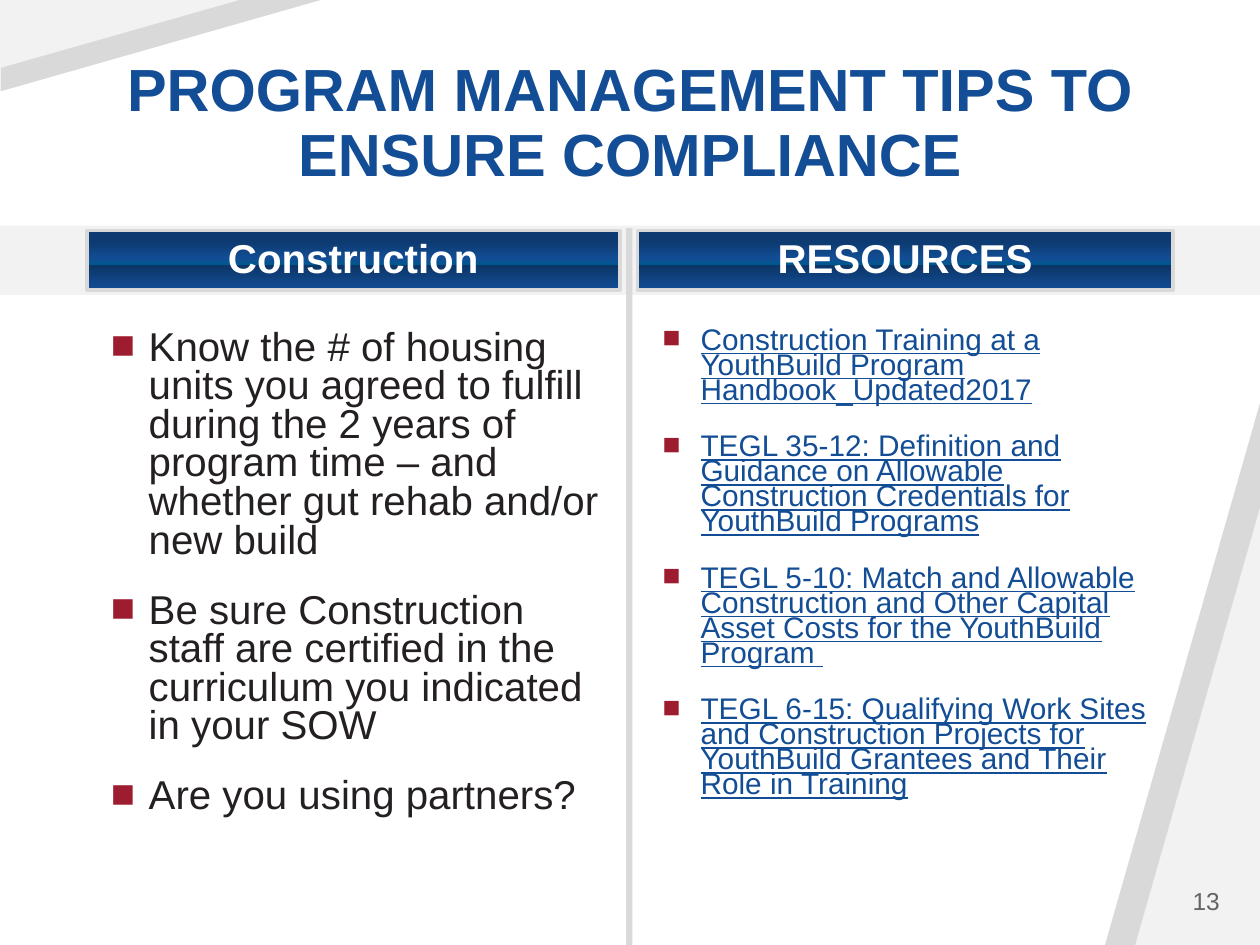
from lxml import etree
from pptx import Presentation
from pptx.dml.color import RGBColor
from pptx.enum import shapes, text
from pptx.oxml import ns
from pptx.util import Inches, Pt

BLUE = RGBColor(0x12, 0x4D, 0x95)
RED = RGBColor(0x9E, 0x1C, 0x30)
INK = RGBColor(0x24, 0x20, 0x21)
GRAY = RGBColor(0x64, 0x64, 0x64)
MID = RGBColor(0xD9, 0xD9, 0xD9)
PALE = RGBColor(0xF2, 0xF2, 0xF2)
WHITE = RGBColor(0xFF, 0xFF, 0xFF)
STOPS = [
    (19, RGBColor(0x0D, 0x3A, 0x70)),
    (47, BLUE),
    (58, RGBColor(0x00, 0x58, 0x8F)),
    (59, RGBColor(0x0D, 0x36, 0x68)),
    (100, BLUE),
]


def shade(fill, root):
    """Give fill, which lies inside the element root, the blue gradient."""
    fill.gradient()
    fill.gradient_angle = 270
    stops = root.find(".//" + ns.qn("a:gsLst"))
    for old in list(stops):
        stops.remove(old)
    for spot, color in STOPS:
        stop = etree.SubElement(stops, ns.qn("a:gs"), pos=str(spot * 1000))
        etree.SubElement(stop, ns.qn("a:srgbClr"), val=str(color))


def write(shape, box, lines, size, color=None, bold=False, underline=False,
          align=text.PP_ALIGN.LEFT, anchor=text.MSO_ANCHOR.TOP,
          spacing=1, gap=0, bullet=None):
    """Place the shape and fill it with lines; no color means the gradient."""
    shape.left, shape.top, shape.width, shape.height = map(Inches, box)
    frame = shape.text_frame
    frame.word_wrap = True
    frame.auto_size = text.MSO_AUTO_SIZE.NONE
    frame.vertical_anchor = anchor
    frame.text = "\n".join(lines)
    for i, para in enumerate(frame.paragraphs):
        para.alignment = align
        para.line_spacing = spacing
        para.space_before = Pt(gap if i else 0)
        if bullet:
            props = para._p.get_or_add_pPr()
            props.set("marL", str(Inches(0.3)))
            props.set("indent", str(Inches(-0.3)))
            tint = etree.SubElement(props, ns.qn("a:buClr"))
            etree.SubElement(tint, ns.qn("a:srgbClr"), val=str(RED))
            etree.SubElement(props, ns.qn("a:buFont"), typeface="Arial")
            etree.SubElement(props, ns.qn("a:buChar"), char=bullet)
        for run in para.runs:
            font = run.font
            font.name = "Arial"
            font.size = Pt(size)
            font.bold = bold
            font.underline = underline
            if color is None:
                shade(font.fill, run._r)
            else:
                font.color.rgb = color


deck = Presentation()
deck.slide_width, deck.slide_height = Inches(10), Inches(7.5)
slide = deck.slides.add_slide(deck.slide_layouts[4])
title, head1, list1, head2, list2 = slide.placeholders

# Background: corner wedges, header band and column divider
WEDGE = shapes.MSO_SHAPE.ISOSCELES_TRIANGLE
RECT = shapes.MSO_SHAPE.RECTANGLE
for kind, box, color, turn, peak in [
    (WEDGE, (8.77, 3.2, 1.23, 4.3), MID, 0, 1),
    (WEDGE, (9.01, 4.03, 0.99, 3.47), PALE, 0, 1),
    (WEDGE, (0.92, -0.92, 0.73, 2.56), MID, 90, 0),
    (WEDGE, (0.68, -0.68, 0.54, 1.9), PALE, 90, 0),
    (RECT, (0, 1.79, 10, 0.55), PALE, 0, None),
    (RECT, (4.97, 1.81, 0.05, 5.69), MID, 0, None),
]:
    part = slide.shapes.add_shape(kind, *map(Inches, box))
    part.shadow.inherit = False
    part.fill.solid()
    part.fill.fore_color.rgb = color
    part.line.fill.background()
    part.rotation = turn
    if peak is not None:
        part.adjustments[0] = peak
    title._element.addprevious(part._element)

write(title, (0.69, 0.4, 8.62, 1.15),
      ["PROGRAM MANAGEMENT TIPS TO ENSURE COMPLIANCE"], 34, bold=True,
      align=text.PP_ALIGN.CENTER, anchor=text.MSO_ANCHOR.BOTTOM, spacing=0.9)

for head, label, left, width in [
    (head1, "Construction", 0.69, 4.23),
    (head2, "RESOURCES", 5.06, 4.25),
]:
    write(head, (left, 1.83, width, 0.47), [label], 23, WHITE, bold=True,
          align=text.PP_ALIGN.CENTER, anchor=text.MSO_ANCHOR.MIDDLE,
          spacing=0.9)
    frame = head.text_frame
    frame.margin_left = frame.margin_right = Inches(0.05)
    frame.margin_top = frame.margin_bottom = Inches(0.06)
    shade(head.fill, head._element)
    head.line.color.rgb = MID
    head.line.width = Pt(2)

write(list1, (0.78, 2.57, 4.1, 4.2), [
    "Know the # of housing units you agreed to fulfill during the 2 years "
    "of program time – and whether gut rehab and/or new build",
    "Be sure Construction staff are certified in the curriculum you "
    "indicated in your SOW",
    "Are you using partners?",
], 23, INK, spacing=0.8, gap=18, bullet="■")

write(list2, (5.16, 2.57, 4.1, 4.2), [
    "Construction Training at a YouthBuild Program Handbook_Updated2017",
    "TEGL 35-12: Definition and Guidance on Allowable Construction "
    "Credentials for YouthBuild Programs",
    "TEGL 5-10: Match and Allowable Construction and Other Capital Asset "
    "Costs for the YouthBuild Program ",
    "TEGL 6-15: Qualifying Work Sites and Construction Projects for "
    "YouthBuild Grantees and Their Role in Training",
], 17, BLUE, underline=True, spacing=0.7, gap=18, bullet="■")

box = (8.96, 6.95, 0.82, 0.4)
number = slide.shapes.add_textbox(*map(Inches, box))
write(number, box, ["13"], 14, GRAY, align=text.PP_ALIGN.RIGHT,
      anchor=text.MSO_ANCHOR.MIDDLE)

# The template's date, footer and number are not on the slide
deck.save("out.pptx")
